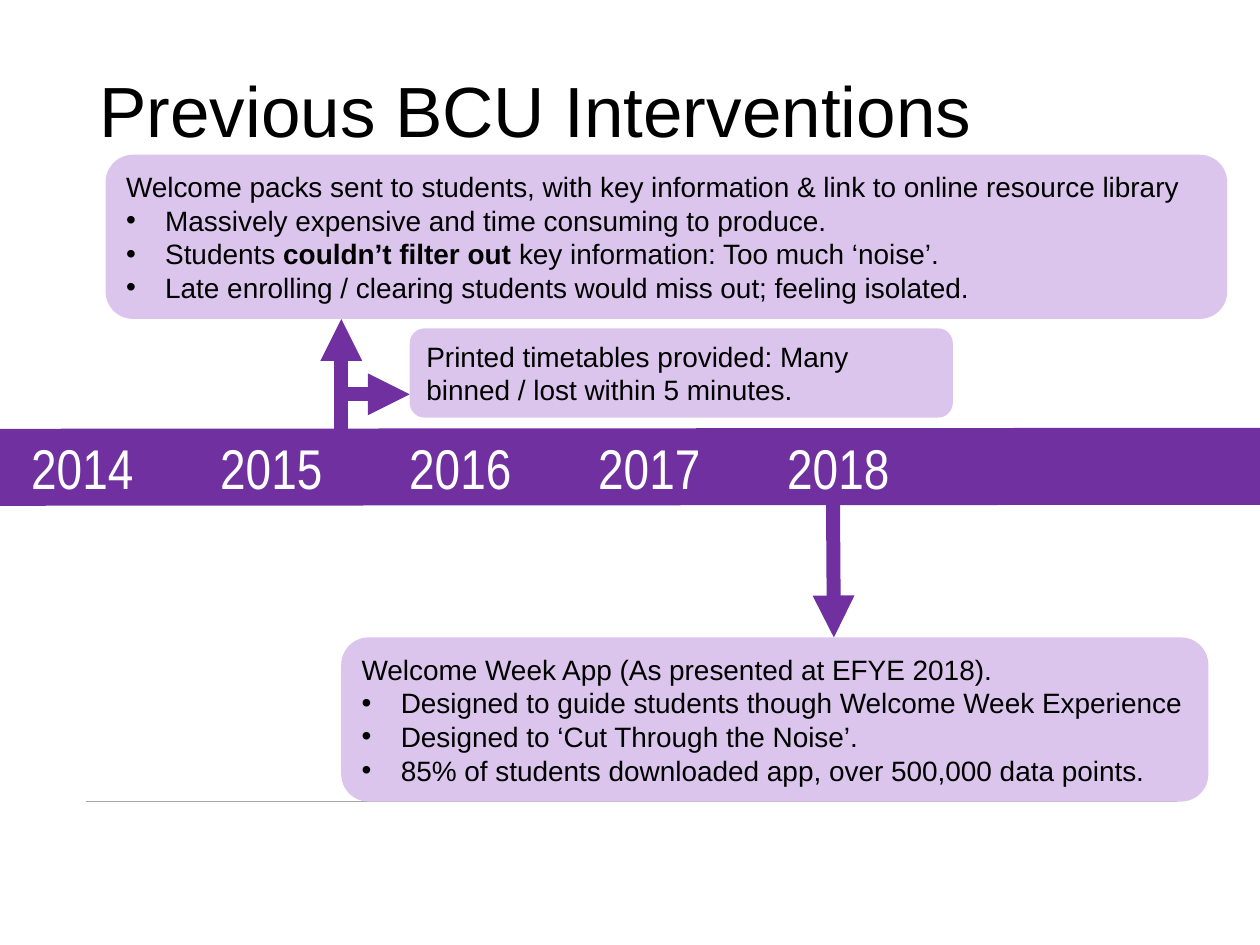
"""Build the timeline slide of previous BCU interventions."""
from dataclasses import dataclass
from lxml import etree
from pptx import Presentation
from pptx import util as u
from pptx.dml.color import RGBColor
from pptx.enum import shapes, text
from pptx.oxml.ns import qn


@dataclass
class Theme:
    dark: RGBColor = RGBColor(0x70, 0x30, 0xA0)
    pale: RGBColor = RGBColor(0xDC, 0xC5, 0xED)
    grey: RGBColor = RGBColor(0xA6, 0xA6, 0xA6)
    ink: RGBColor = RGBColor(0, 0, 0)
    white: RGBColor = RGBColor(255, 255, 255)
    font: str = "Arial"
    thin: str = "Arial Narrow"
    head: float = 40.6
    year: float = 32
    body: float = 16


theme = Theme()


def style(para, size, color, font=theme.font):
    para.alignment = text.PP_ALIGN.LEFT
    para.font.size = u.Pt(size)
    para.font.name = font
    para.font.color.rgb = color


def rule(x1, y1, x2, y2, color, width, arrow=False):
    line = slide.shapes.add_connector(
        shapes.MSO_CONNECTOR.STRAIGHT, u.Cm(x1), u.Cm(y1), u.Cm(x2), u.Cm(y2))
    line.line.color.rgb = color
    line.line.width = u.Pt(width)
    if arrow:
        ln = line.line._get_or_add_ln()
        etree.SubElement(ln, qn("a:tailEnd"), type="triangle")
    etree.SubElement(line._element.spPr, qn("a:effectLst"))


deck = Presentation()
deck.slide_width, deck.slide_height = u.Cm(25.4), u.Cm(19.05)
slide = deck.slides.add_slide(deck.slide_layouts[5])

title = slide.shapes.title
title.left, title.top = u.Cm(1.75), u.Cm(0.46)
title.width, title.height = u.Cm(21.9), u.Cm(3.68)
title.text_frame.text = "Previous BCU Interventions"
title.text_frame.vertical_anchor = text.MSO_ANCHOR.MIDDLE
title.text_frame.paragraphs[0].line_spacing = 0.9
style(title.text_frame.paragraphs[0], theme.head, theme.ink)

rule(1.73, 16.15, 23.72, 16.15, theme.grey, 0.5)
arrows = [
    (6.88, 9.4, 6.88, 6.43),
    (6.88, 7.95, 8.26, 7.95),
    (16.79, 9.83, 16.81, 12.85),
]
for ends in arrows:
    rule(*ends, theme.dark, 8, arrow=True)

notes = [
    ((2.13, 3.12, 22.61, 3.31), [
        ["Welcome packs sent to students, with key information & link to online resource library"],
        ["Massively expensive and time consuming to produce."],
        ["Students ", "couldn’t filter out ", "key information: Too much ‘noise’."],
        ["Late enrolling / clearing students would miss out; feeling isolated."],
    ]),
    ((8.26, 6.62, 10.95, 1.8), [
        ["Printed timetables provided: Many binned / lost within 5 minutes."],
    ]),
    ((6.88, 12.85, 17.48, 3.31), [
        ["Welcome Week App (As presented at EFYE 2018)."],
        ["Designed to guide students though Welcome Week Experience"],
        ["Designed to ‘Cut Through the Noise’."],
        ["85% of students downloaded app, over 500,000 data points."],
    ]),
]
for place, lines in notes:
    box = slide.shapes.add_shape(
        shapes.MSO_SHAPE.ROUNDED_RECTANGLE, *map(u.Cm, place))
    box.shadow.inherit = False
    box.fill.solid()
    box.fill.fore_color.rgb = theme.pale
    box.line.fill.background()
    frame = box.text_frame
    frame.word_wrap = True
    frame.vertical_anchor = text.MSO_ANCHOR.MIDDLE
    for row, parts in enumerate(lines):
        para = frame.add_paragraph() if row else frame.paragraphs[0]
        if row:
            props = para._p.get_or_add_pPr()
            props.set("marL", str(u.Cm(0.79)))
            props.set("indent", str(-u.Cm(0.79)))
            etree.SubElement(props, qn("a:buFont"), typeface=theme.font)
            etree.SubElement(props, qn("a:buChar"), char="•")
        for spot, part in enumerate(parts):
            run = para.add_run()
            run.text = part
            if spot == 1:
                run.font.bold = True
        style(para, theme.body, theme.ink)

rule(0, 9.42, 25.4, 9.4, theme.dark, 44)
years = slide.shapes.add_textbox(u.Cm(0.38), u.Cm(8.61), u.Cm(25.4), u.Cm(1.63))
years.text_frame.word_wrap = True
years.text_frame.text = "\t\t".join(str(year) for year in range(2014, 2019))
style(years.text_frame.paragraphs[0], theme.year, theme.white, theme.thin)

deck.save("out.pptx")
